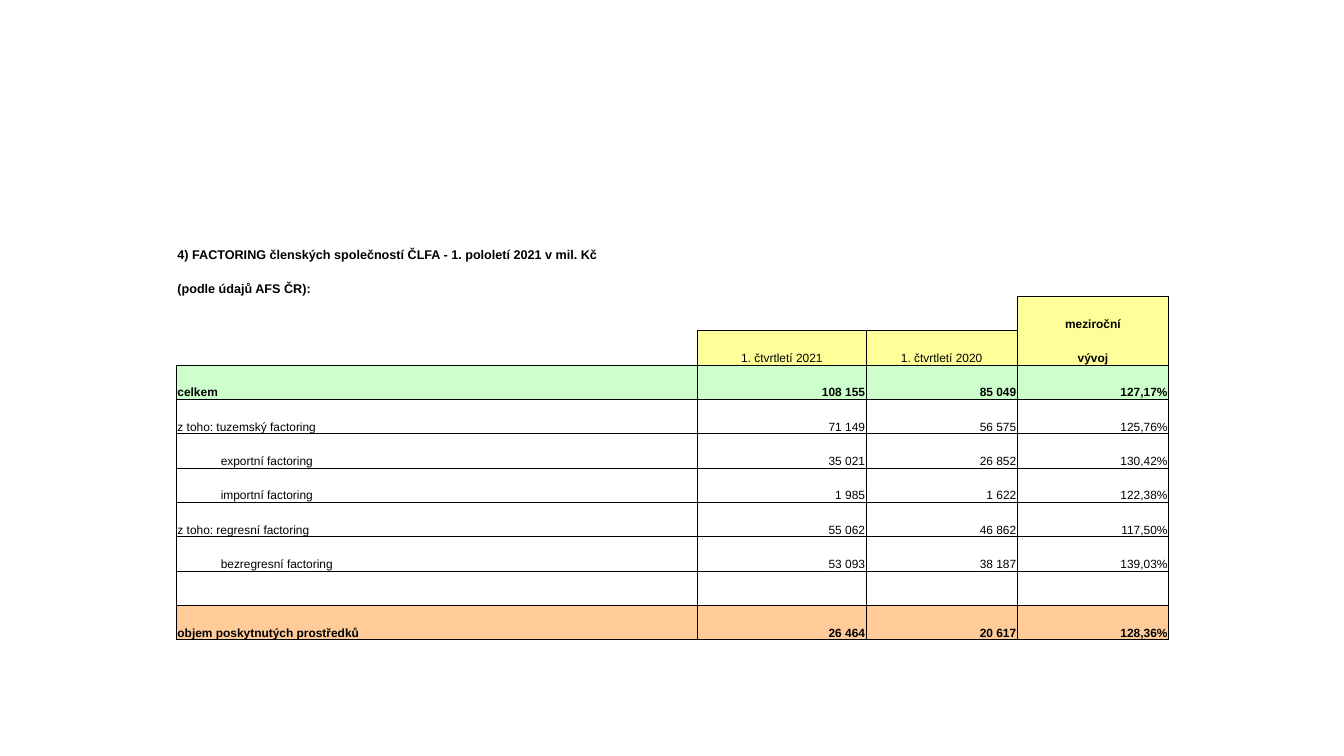
import dataclasses

import pptx
import pptx.dml.color
import pptx.enum.text
import pptx.oxml.ns
import pptx.util
from lxml import etree

PX = 9144  # EMU; 100 px make one inch
ALIGN = pptx.enum.text.PP_ALIGN
SIDES = {"L": (0, -1), "R": (0, 1), "T": (-1, 0), "B": (1, 0)}


@dataclasses.dataclass(frozen=True)
class Theme:
    font: str = "Arial"
    ink: str = "000000"
    header: str = "FFFF99"
    total: str = "CCFFCC"
    funding: str = "FFCC99"
    title_size: float = 9
    body_size: float = 8.5
    thin: float = 0.5
    thick: float = 1


THEME = Theme()
COLUMN_WIDTHS = [517, 167, 150, 150]
TABLE_LEFT, TABLE_TOP, TABLE_HEIGHT = 175, 226, 409
LABEL_INDENT = 43

ROWS = [
    ["4) FACTORING členských společností ČLFA - 1. pololetí 2021 v mil. Kč", "", "", ""],
    ["(podle údajů AFS ČR):", "", "", ""],
    ["", "", "", "meziroční"],
    ["", "1. čtvrtletí 2021", "1. čtvrtletí 2020", "vývoj"],
    ["celkem", "108 155", "85 049", "127,17%"],
    ["z toho: tuzemský factoring", "71 149", "56 575", "125,76%"],
    ["exportní factoring", "35 021", "26 852", "130,42%"],
    ["importní factoring", "1 985", "1 622", "122,38%"],
    ["z toho: regresní factoring", "55 062", "46 862", "117,50%"],
    ["bezregresní factoring", "53 093", "38 187", "139,03%"],
    ["", "", "", ""],
    ["objem poskytnutých prostředků", "26 464", "20 617", "128,36%"],
]
TITLE_ROWS = {0, 1}
TOTAL_ROW, FUNDING_ROW = 4, 11
INDENTED_ROWS = {6, 7, 9}
HEADER_CELLS = {(2, 3), (3, 1), (3, 2), (3, 3)}
TREND_HEADER = {(2, 3), (3, 3)}  # two cells without a line between them
GROUP_BREAK = {7, 8}  # rows parted by a thicker line


def is_framed(row, column):
    return row >= TOTAL_ROW or (row, column) in HEADER_CELLS


def border_width(here, there):
    """Width in points of the edge between two cells, or None for no line."""
    if {here, there} == TREND_HEADER or not (is_framed(*here) or is_framed(*there)):
        return None
    if {here[0], there[0]} == GROUP_BREAK:
        return THEME.thick
    return THEME.thin


def set_borders(cell, row, column):
    qn = pptx.oxml.ns.qn
    properties = cell._tc.get_or_add_tcPr()
    for order, (side, (down, right)) in enumerate(SIDES.items()):
        width = border_width((row, column), (row + down, column + right))
        line = etree.Element(qn(f"a:ln{side}"))
        if width is None:
            etree.SubElement(line, qn("a:noFill"))
        else:
            line.set("w", str(pptx.util.Pt(width)))
            paint = etree.SubElement(line, qn("a:solidFill"))
            etree.SubElement(paint, qn("a:srgbClr"), val=THEME.ink)
        properties.insert(order, line)


def set_fill(cell, row, column):
    if (row, column) in HEADER_CELLS:
        color = THEME.header
    else:
        color = {TOTAL_ROW: THEME.total, FUNDING_ROW: THEME.funding}.get(row)
    if color is None:
        cell.fill.background()
    else:
        cell.fill.solid()
        cell.fill.fore_color.rgb = pptx.dml.color.RGBColor.from_string(color)


def write_text(cell, text, row, column):
    layout = {
        "margin_left": PX,
        "margin_right": PX,
        "margin_top": PX,
        "margin_bottom": 0,
        "vertical_anchor": pptx.enum.text.MSO_ANCHOR.BOTTOM,
    }
    for name, value in layout.items():
        setattr(cell, name, value)
    if not text:
        return

    paragraph = cell.text_frame.paragraphs[0]
    if (row, column) in HEADER_CELLS:
        paragraph.alignment = ALIGN.CENTER
    else:
        paragraph.alignment = ALIGN.RIGHT if column else ALIGN.LEFT
    if column == 0 and row in INDENTED_ROWS:
        paragraph._p.get_or_add_pPr().set("marL", str(LABEL_INDENT * PX))

    run = paragraph.add_run()
    run.text = text
    is_title = row in TITLE_ROWS
    style = {
        "name": THEME.font,
        "size": pptx.util.Pt(THEME.title_size if is_title else THEME.body_size),
        "bold": is_title or row in (TOTAL_ROW, FUNDING_ROW) or (row, column) in TREND_HEADER,
    }
    for name, value in style.items():
        setattr(run.font, name, value)
    run.font.color.rgb = pptx.dml.color.RGBColor.from_string(THEME.ink)


def add_factoring_table(slide):
    bounds = [TABLE_LEFT, TABLE_TOP, sum(COLUMN_WIDTHS), TABLE_HEIGHT]
    factoring = slide.shapes.add_table(
        len(ROWS), len(COLUMN_WIDTHS), *(length * PX for length in bounds)
    ).table
    factoring.first_row = False
    factoring.horz_banding = False
    for column, width in zip(factoring.columns, COLUMN_WIDTHS):
        column.width = width * PX
    for row, texts in enumerate(ROWS):
        for column, text in enumerate(texts):
            cell = factoring.cell(row, column)
            write_text(cell, text, row, column)
            set_borders(cell, row, column)
            set_fill(cell, row, column)
    factoring.cell(0, 0).merge(factoring.cell(0, 1))


def main():
    presentation = pptx.Presentation()
    presentation.slide_width = 1333 * PX
    presentation.slide_height = 750 * PX
    slide = presentation.slides.add_slide(presentation.slide_layouts[6])
    add_factoring_table(slide)
    presentation.save("out.pptx")


if __name__ == "__main__":
    main()
